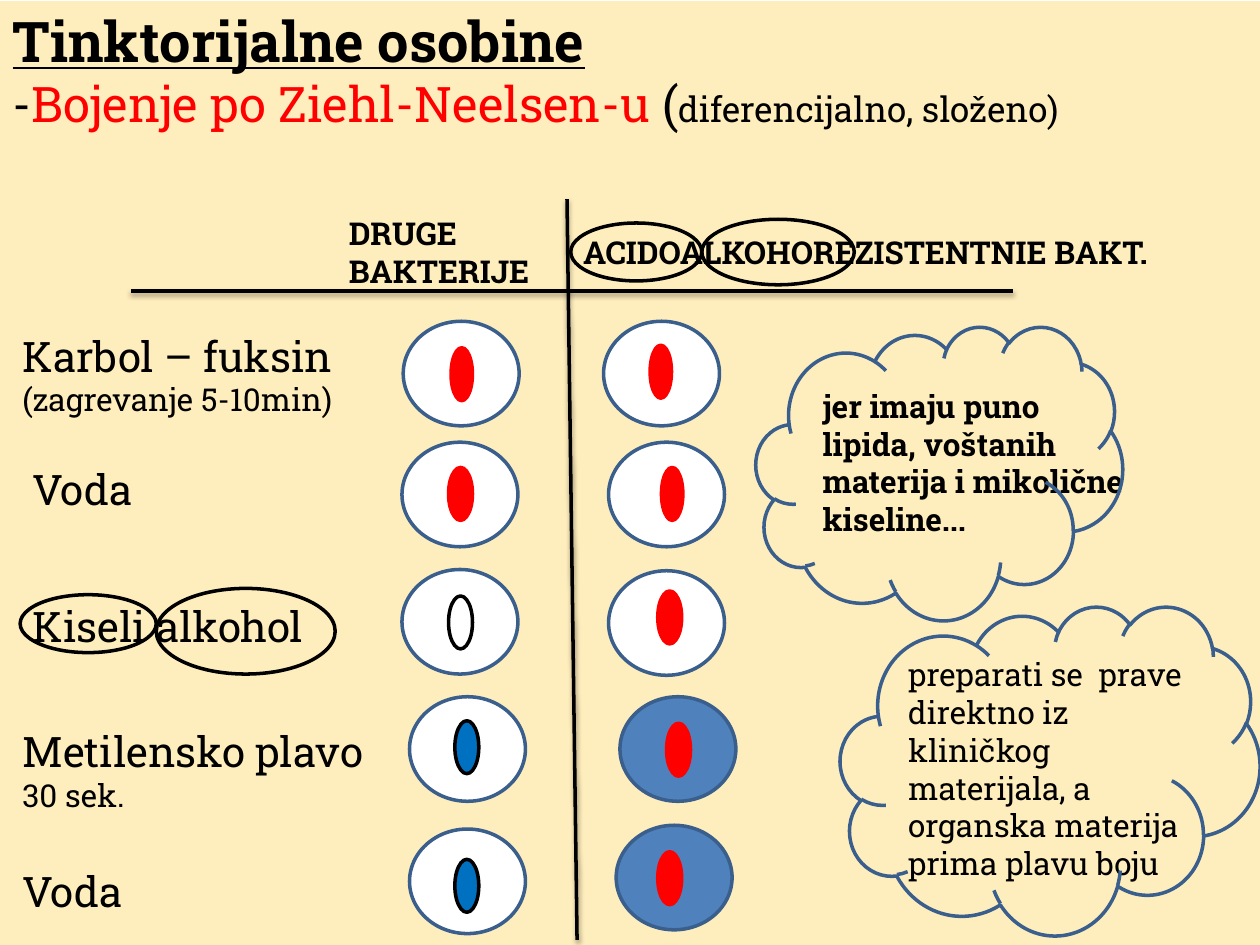
from lxml import etree
from pptx import Presentation
from pptx.dml.color import RGBColor
from pptx.enum.shapes import MSO_CONNECTOR, MSO_SHAPE
from pptx.enum.text import MSO_ANCHOR, MSO_AUTO_SIZE, PP_ALIGN
from pptx.oxml.ns import qn
from pptx.util import Inches, Pt

ELLIPSE, CLOUD, RECT = MSO_SHAPE.OVAL, MSO_SHAPE.CLOUD, MSO_SHAPE.RECTANGLE
STRAIGHT = MSO_CONNECTOR.STRAIGHT
TOP, LEFT, NO_FIT = MSO_ANCHOR.TOP, PP_ALIGN.LEFT, MSO_AUTO_SIZE.NONE

FONT = "Roboto Slab"
COLORS = {"black": "000000", "white": "FFFFFF", "red": "FF0000", "gold": "FFC000",
          "outline": "3A5F8C", "blue": "4F81BD", "methylene": "0070C0"}

# The slide is a grid of 100 columns by 75 rows
SLIDE_W, SLIDE_H = Inches(10), Inches(7.5)
COLS, ROWS = 100, 75
CELL_W, CELL_H = 9.2, 8.3
GERM_H = 4.2

# Each stain step: (cell col, cell row, cell fill), (germ col, row, width, fill, line)
OTHER_BACTERIA = [
    ((32, 25.5, "white"), (35.8, 27.6, 1.7, "red", "red")),
    ((31.9, 35.1, "white"), (35.6, 37.1, 1.9, "red", "red")),
    ((31.9, 45.2, "white"), (35.6, 47.3, 1.9, "white", "black")),
    ((32.5, 55.3, "white"), (36.1, 57.2, 1.9, "methylene", "black")),
    ((32.5, 65.8, "white"), (36.1, 68.2, 1.9, "methylene", "black")),
]
RESISTANT_BACTERIA = [
    ((47.9, 25.5, "white"), (51.6, 27.4, 1.7, "red", "red")),
    ((48.3, 35.1, "white"), (52.5, 37.1, 1.7, "red", "red")),
    ((48.3, 45.3, "white"), (52.2, 46.9, 1.9, "red", "red")),
    ((49.2, 55.3, "blue"), (52.9, 57.4, 1.9, "red", "red")),
    ((48.9, 65.5, "blue"), (52.2, 67.6, 1.9, "red", "red")),
]

# Texts: box, paragraphs of (text, size), bold
HEADINGS = [
    ((26.7, 16.5, 21, 7.1), [("DRUGE BAKTERIJE", 18)], True),
    ((45.3, 18, 52.9, 4), [("ACIDOALKOHOREZISTENTNIE BAKT.", 18)], True),
]
STEPS = [
    ((0.8, 25.7, 30, 8.1), [("Karbol – fuksin", 24), ("(zagrevanje 5-10min)", 18)], False),
    ((1.6, 36.3, 21.4, 5), [("Voda", 24)], False),
    ((1.6, 47.2, 33.1, 8.1), [("Kiseli alkohol", 24)], False),
    ((0.8, 57.1, 34.2, 11.4), [("Metilensko plavo", 24), ("30 sek.", 18)], False),
    ((0.8, 68.2, 21.4, 5), [("Voda", 24)], False),
]
NOTES = [
    ((64.3, 30.2, 26.7, 16.2),
     [("jer imaju puno lipida, voštanih materija i mikolične kiseline...", 18)], True),
    ((71.1, 51.5, 25.8, 19.2),
     [("preparati se  prave direktno iz kliničkog materijala, "
       "a organska materija prima plavu boju", 18)], False),
]
CLOUDS = [(60, 25.9, 29.1, 23.3), (66.7, 48.1, 33.3, 26.1)]
WORD_RINGS = [(1.6, 47.2, 10.8, 4.6), (12.4, 46.7, 14.2, 6.8),
              (55.7, 17.4, 12.1, 5.2), (45.3, 17.7, 10.4, 4.6)]
AXES = [(10.4, 23.1, 80.4, 23.1), (45, 15.8, 45.8, 74.6)]


def rgb(name):
    return RGBColor.from_string(COLORS[name])


def grid(x, y, x2, y2):
    """Turn two column/row pairs into slide lengths."""
    w, h = SLIDE_W / COLS, SLIDE_H / ROWS
    return int(x * w), int(y * h), int(x2 * w), int(y2 * h)


def add_figure(slide, kind, box, fill=None, line=None):
    s = slide.shapes.add_shape(kind, *grid(*box))
    s.shadow.inherit = False
    if fill:
        s.fill.solid()
        s.fill.fore_color.rgb = rgb(fill)
    else:
        s.fill.background()
    if line:
        s.line.color.rgb = rgb(line)
        s.line.width = Pt(2)
    else:
        s.line.fill.background()
    return s


def add_backdrop(slide):
    s = add_figure(slide, RECT, (0, 0.1, COLS, ROWS), "gold")
    color = s.fill._xPr.find(".//" + qn("a:srgbClr"))
    etree.SubElement(color, qn("a:alpha"), val="26000")
    slide.shapes._spTree.insert(2, s._element)


def format_run(r, size, color="black", bold=False, underline=False):
    r.font.name = FONT
    r.font.size = Pt(size)
    r.font.color.rgb = rgb(color)
    r.font.bold = bold
    r.font.underline = underline


def set_title(slide):
    title = slide.shapes.title
    title.left, title.top, title.width, title.height = grid(0, 0, 100.8, 11.1)
    tf = title.text_frame
    tf.auto_size, tf.vertical_anchor, tf.word_wrap = NO_FIT, TOP, True
    tf.text = "Tinktorijalne osobine"
    format_run(tf.paragraphs[0].runs[0], 32, bold=True, underline=True)
    p = tf.add_paragraph()
    for text, size, color in [("-", 28, "black"),
                              ("Bojenje po Ziehl-Neelsen-u ", 28, "red"),
                              ("(", 28, "black"),
                              ("diferencijalno, složeno)", 20, "black")]:
        r = p.add_run()
        r.text = text
        format_run(r, size, color)
    for p in tf.paragraphs:
        p.alignment = LEFT


def add_text(slide, box, lines, bold):
    tf = slide.shapes.add_textbox(*grid(*box)).text_frame
    tf.word_wrap = True
    tf.text = "\n".join(text for text, _ in lines)
    for p, (_, size) in zip(tf.paragraphs, lines):
        format_run(p.runs[0], size, bold=bold)


def add_bacterium(slide, cell, germ):
    x, y, fill = cell
    add_figure(slide, ELLIPSE, (x, y, CELL_W, CELL_H), fill, "outline")
    x, y, width, fill, line = germ
    add_figure(slide, ELLIPSE, (x, y, width, GERM_H), fill, line)


def add_axis(slide, ends):
    s = slide.shapes.add_connector(STRAIGHT, *grid(*ends))
    s.line.color.rgb = rgb("black")
    s.line.width = Pt(2)
    effects = etree.SubElement(s._element.spPr, qn("a:effectLst"))
    shadow = etree.SubElement(effects, qn("a:outerShdw"), blurRad=str(Pt(3.1)),
                              dist=str(Pt(1.6)), dir="5400000", rotWithShape="0")
    color = etree.SubElement(shadow, qn("a:srgbClr"), val=COLORS["black"])
    etree.SubElement(color, qn("a:alpha"), val="38000")


def main():
    prs = Presentation()
    prs.slide_width, prs.slide_height = SLIDE_W, SLIDE_H
    slide = prs.slides.add_slide(prs.slide_layouts[5])
    add_backdrop(slide)
    set_title(slide)

    # Bacteria after each staining step
    for cell, germ in OTHER_BACTERIA + RESISTANT_BACTERIA:
        add_bacterium(slide, cell, germ)

    # Table axes, headings and step names
    for ends in AXES:
        add_axis(slide, ends)
    for item in HEADINGS + STEPS:
        add_text(slide, *item)
    for box in WORD_RINGS:
        add_figure(slide, ELLIPSE, box, line="black")

    # Remarks in clouds
    for note, cloud in zip(NOTES, CLOUDS):
        add_text(slide, *note)
        add_figure(slide, CLOUD, cloud, line="outline")

    prs.save("out.pptx")


if __name__ == "__main__":
    main()
